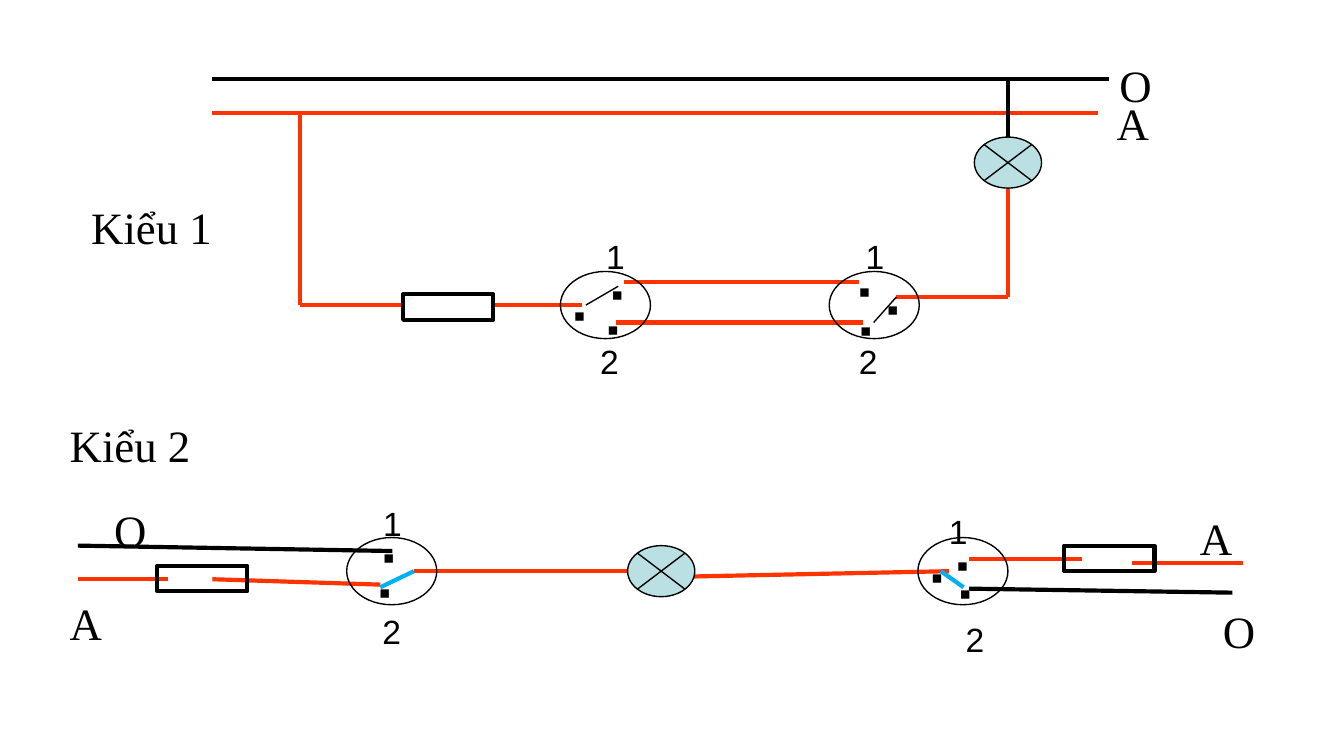
from dataclasses import dataclass

from lxml.etree import SubElement
from pptx import Presentation
from pptx.dml.color import RGBColor
from pptx.enum.shapes import MSO_CONNECTOR as Connector, MSO_SHAPE as Preset
from pptx.enum.text import MSO_AUTO_SIZE as AutoSize, PP_ALIGN as Align
from pptx.oxml.ns import qn
from pptx.slide import Slide
from pptx.util import Emu, Pt

PX = 9144
PAGE_WIDTH = 1000
COLORS = {"black": "000000", "live": "FF3300", "lever": "00B0F0", "lamp": "BBE0E3"}
THICK, THIN = 2.25, 0.75


@dataclass(frozen=True)
class Wire:
    x1: int
    y1: int
    x2: int
    y2: int
    color: str = "live"
    weight: float = THICK


@dataclass(frozen=True)
class Part:
    preset: Preset
    width: int
    height: int
    weight: float
    fill: str | None
    spots: tuple[tuple[int, int], ...]


@dataclass(frozen=True)
class Label:
    text: str
    x: int
    y: int
    width: int


WIRES = [
    Wire(158, 59, 825, 59, "black"),
    Wire(158, 84, 817, 84),
    Wire(223, 84, 223, 227),
    Wire(223, 227, 298, 227),
    Wire(367, 227, 433, 227),
    Wire(464, 210, 639, 210),
    Wire(458, 240, 642, 240),
    Wire(667, 221, 750, 221),
    Wire(750, 221, 750, 121),
    Wire(750, 102, 750, 59, "black"),
    Wire(436, 227, 460, 213, "black", THIN),
    Wire(650, 240, 667, 221, "black", THIN),
    Wire(58, 406, 292, 410, "black"),
    Wire(58, 431, 125, 431),
    Wire(158, 431, 283, 435),
    Wire(308, 425, 483, 425),
    Wire(514, 429, 706, 425),
    Wire(721, 416, 805, 416),
    Wire(842, 419, 925, 419),
    Wire(721, 438, 917, 441, "black"),
    Wire(283, 437, 308, 425, "lever"),
    Wire(717, 437, 700, 425, "lever"),
]

PARTS = [
    Part(Preset.RECTANGLE, 67, 19, THICK, None, ((300, 219), (117, 421), (792, 406))),
    Part(Preset.OVAL, 67, 50, THIN, None, ((417, 202), (617, 202), (258, 400), (683, 400))),
    Part(Preset.FLOWCHART_SUMMING_JUNCTION, 50, 38, THIN, "lamp", ((725, 102), (467, 406))),
]

CONTACTS = [
    (445, 198, 33), (442, 224, 83), (417, 214, 50),
    (650, 209, 33), (629, 196, 50), (630, 225, 50),
    (275, 394, 50), (272, 420, 50),
    (683, 409, 83), (704, 421, 83), (702, 400, 83),
]

POSITIONS = [
    Label("1", 433, 171, 50), Label("2", 420, 249, 67),
    Label("1", 605, 171, 92), Label("2", 625, 249, 42),
    Label("1", 267, 369, 50), Label("2", 258, 450, 67),
    Label("1", 667, 375, 92), Label("2", 692, 456, 67),
]

MAINS = [
    Label("O", 823, 38, 42), Label("A", 821, 66, 42),
    Label("O", 75, 369, 42), Label("A", 42, 438, 67),
    Label("A", 883, 375, 42), Label("O", 900, 444, 42),
]

TITLES = [Label("Kiểu 1", 58, 144, 111), Label("Kiểu 2", 42, 306, 111)]


def px(length: int) -> Emu:
    return Emu(length * PX)


def rgb(name: str) -> RGBColor:
    return RGBColor.from_string(COLORS[name])


def draw_wire(page: Slide, wire: Wire) -> None:
    line = page.shapes.add_connector(
        Connector.STRAIGHT, px(wire.x1), px(wire.y1), px(wire.x2), px(wire.y2)
    )
    line.line.color.rgb = rgb(wire.color)
    line.line.width = Pt(wire.weight)
    SubElement(line._element.spPr, qn("a:effectLst"))


def draw_part(page: Slide, part: Part) -> None:
    for x, y in part.spots:
        shape = page.shapes.add_shape(
            part.preset, px(x), px(y), px(part.width), px(part.height)
        )
        shape.shadow.inherit = False
        if part.fill:
            shape.fill.solid()
            shape.fill.fore_color.rgb = rgb(part.fill)
        else:
            shape.fill.background()
        shape.line.color.rgb = rgb("black")
        shape.line.width = Pt(part.weight)


def add_text(
    page: Slide,
    label: Label,
    *,
    height: int = 40,
    size: int = 18,
    font: str = "Arial",
    align: Align = Align.LEFT,
    wrap: bool = True,
) -> None:
    box = page.shapes.add_textbox(
        px(label.x), px(label.y), px(label.width), px(height)
    )
    frame = box.text_frame
    frame.word_wrap = wrap
    frame.auto_size = AutoSize.SHAPE_TO_FIT_TEXT
    para = frame.paragraphs[0]
    para.alignment = align
    span = para.add_run()
    span.text = label.text
    span.font.size = Pt(size)
    span.font.name = font
    span.font.color.rgb = rgb("black")


def main() -> None:
    deck = Presentation()
    deck.slide_width = px(PAGE_WIDTH)
    deck.slide_height = Emu(deck.slide_width * 9 // 16)
    page = deck.slides.add_slide(deck.slide_layouts[6])
    for wire in WIRES:
        draw_wire(page, wire)
    for part in PARTS:
        draw_part(page, part)
    for x, y, width in CONTACTS:
        add_text(page, Label("▪", x, y, width))
    for label in POSITIONS:
        add_text(page, label, align=Align.CENTER)
    serif = {"height": 51, "size": 24, "font": "Times New Roman"}
    for label in MAINS:
        add_text(page, label, **serif)
    for label in TITLES:
        add_text(page, label, wrap=False, **serif)
    deck.save("out.pptx")


if __name__ == "__main__":
    main()
